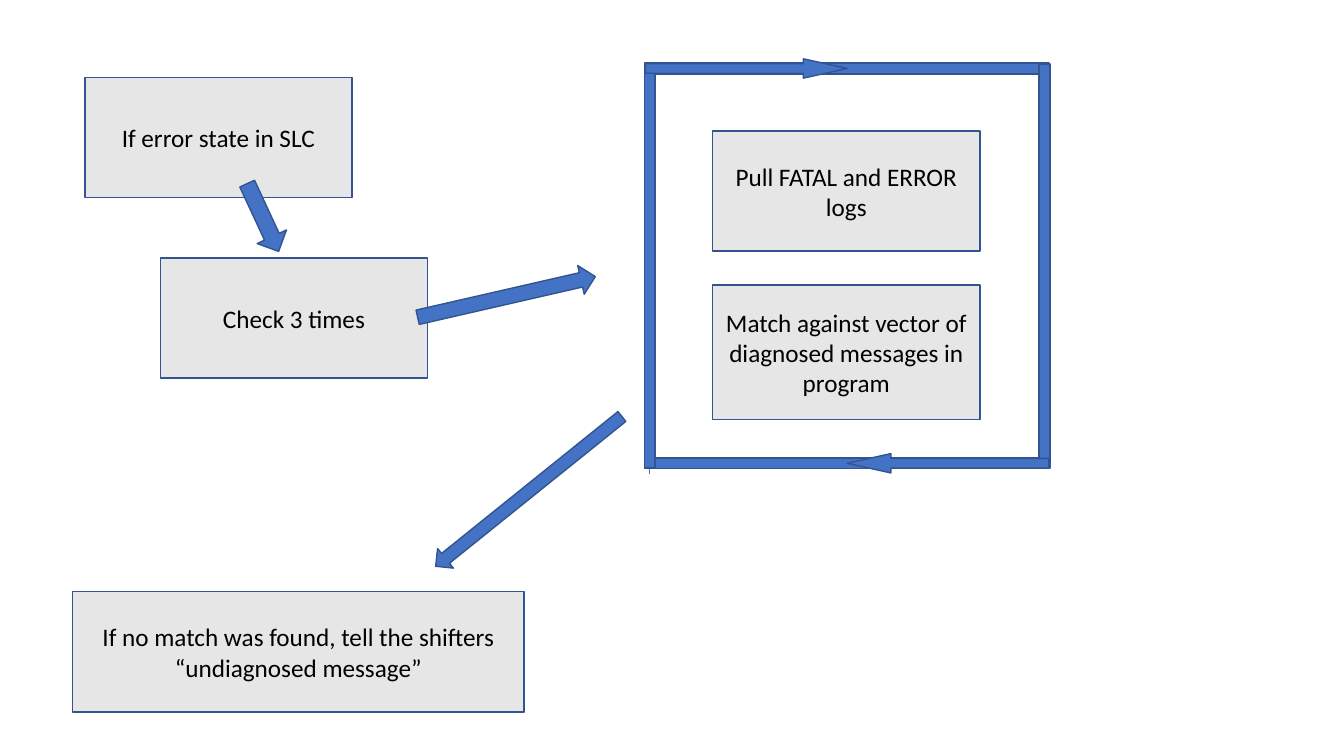
from dataclasses import dataclass

import pptx
import pptx.dml.color
import pptx.enum.shapes
import pptx.enum.text
import pptx.oxml
import pptx.oxml.ns
import pptx.util

# Grid: 160 columns by 90 rows of square cells
COLUMNS, ROWS = 160, 90
CELL = pptx.util.Inches(7.5) / ROWS

BLUE, DARK_BLUE, GREY, BLACK = "4472C4", "325491", "E7E6E6", "000000"
RECTANGLE = pptx.enum.shapes.MSO_SHAPE.RECTANGLE
ARROW = pptx.enum.shapes.MSO_SHAPE.RIGHT_ARROW

BOX_WIDTH, BOX_HEIGHT = 31.8, 14.3
TEXT_FORMAT = {"name": "Calibri", "size": pptx.util.Pt(18)}


@dataclass
class Box:
    text: str
    column: float
    row: float
    width: float = BOX_WIDTH
    height: float = BOX_HEIGHT


@dataclass
class Bar:
    """A bar or block arrow, placed by its centre."""
    kind: pptx.enum.shapes.MSO_SHAPE
    column: float
    row: float
    length: float
    thickness: float
    rotation: float = 0
    head: float = 0.5


def cells(count: float) -> pptx.util.Emu:
    return pptx.util.Emu(round(count * CELL))


def colour(value: str) -> pptx.dml.color.RGBColor:
    return pptx.dml.color.RGBColor.from_string(value)


def add_block(slide, kind, column: float, row: float, width: float, height: float, fill: str):
    shape = slide.shapes.add_shape(kind, *map(cells, (column, row, width, height)))
    shape.shadow.inherit = False
    shape.fill.solid()
    shape.fill.fore_color.rgb = colour(fill)
    shape.line.color.rgb = colour(DARK_BLUE)
    shape.line.width = pptx.util.Pt(1)
    return shape


def add_box(slide, box: Box) -> None:
    shape = add_block(slide, RECTANGLE, box.column, box.row, box.width, box.height, GREY)
    frame = shape.text_frame
    frame.word_wrap = True
    frame.vertical_anchor = pptx.enum.text.MSO_ANCHOR.MIDDLE
    paragraph = frame.paragraphs[0]
    paragraph.alignment = pptx.enum.text.PP_ALIGN.CENTER
    run = paragraph.add_run()
    run.text = box.text
    for name, value in TEXT_FORMAT.items():
        setattr(run.font, name, value)
    run.font.color.rgb = colour(BLACK)


def add_bar(slide, bar: Bar) -> None:
    shape = add_block(slide, bar.kind, bar.column - bar.length / 2,
                      bar.row - bar.thickness / 2, bar.length, bar.thickness, BLUE)
    shape.rotation = bar.rotation
    if bar.kind == ARROW:
        shape.adjustments[1] = bar.head


def add_thin_arrow(slide, column: float, start_row: float, end_row: float) -> None:
    connector = slide.shapes.add_connector(
        pptx.enum.shapes.MSO_CONNECTOR.STRAIGHT,
        *map(cells, (column, start_row, column, end_row)))
    connector.line.color.rgb = colour(BLUE)
    connector.line.width = pptx.util.Pt(0.5)
    namespace = pptx.oxml.ns.nsdecls("a")
    connector.line._get_or_add_ln().append(
        pptx.oxml.parse_xml(f'<a:tailEnd {namespace} type="triangle"/>'))
    connector._element.spPr.append(pptx.oxml.parse_xml(f"<a:effectLst {namespace}/>"))


# Steps of the check
BOXES = [
    Box("If error state in SLC", 10.1, 9.25),
    Box("Check 3 times", 19.1, 30.7),
    Box("Pull FATAL and ERROR logs", 84.85, 15.6),
    Box("Match against vector of diagnosed messages in program", 84.85, 33.95, height=16),
    Box("If no match was found, tell the shifters “undiagnosed message”",
        8.65, 70.45, width=53.75),
]

# Loop around the two log steps
LOOP_COLUMN, LOOP_ROW, LOOP_HALF = 100.85, 31.65, 23.5
SIDE, SIDE_THICKNESS = 48.1, 1.3
TOP, BOTTOM = LOOP_ROW - LOOP_HALF, LOOP_ROW + LOOP_HALF
LEFT, RIGHT = LOOP_COLUMN - LOOP_HALF, LOOP_COLUMN + LOOP_HALF
FLOW, FLOW_THICKNESS, FLOW_HEAD = 24, 2.3, 2.26

BARS = [
    # Arrows between the steps
    Bar(ARROW, 62.95, 58.5, 28.45, 3, 141.2),
    Bar(ARROW, 31.3, 25.9, 8.9, 3.85, 65.1),
    Bar(ARROW, 60.3, 35.35, 21.7, 3.5, 347.1),
    # Sides of the loop and its direction
    Bar(RECTANGLE, LOOP_COLUMN, TOP, SIDE, SIDE_THICKNESS),
    Bar(RECTANGLE, LOOP_COLUMN, BOTTOM, SIDE, SIDE_THICKNESS),
    Bar(RECTANGLE, LEFT, LOOP_ROW, SIDE, SIDE_THICKNESS, 90),
    Bar(ARROW, LOOP_COLUMN - FLOW / 2, TOP, FLOW, FLOW_THICKNESS, 0, FLOW_HEAD),
    Bar(RECTANGLE, RIGHT, LOOP_ROW, SIDE, SIDE_THICKNESS, 90),
    Bar(ARROW, LOOP_COLUMN + FLOW / 2, BOTTOM, FLOW, FLOW_THICKNESS, 180, FLOW_HEAD),
]


def main() -> None:
    presentation = pptx.Presentation()
    presentation.slide_width = cells(COLUMNS)
    presentation.slide_height = cells(ROWS)
    slide = presentation.slides.add_slide(presentation.slide_layouts[6])

    add_thin_arrow(slide, 77.3, 56.4, 37.9)
    for box in BOXES:
        add_box(slide, box)
    for bar in BARS:
        add_bar(slide, bar)

    presentation.save("out.pptx")


if __name__ == "__main__":
    main()
